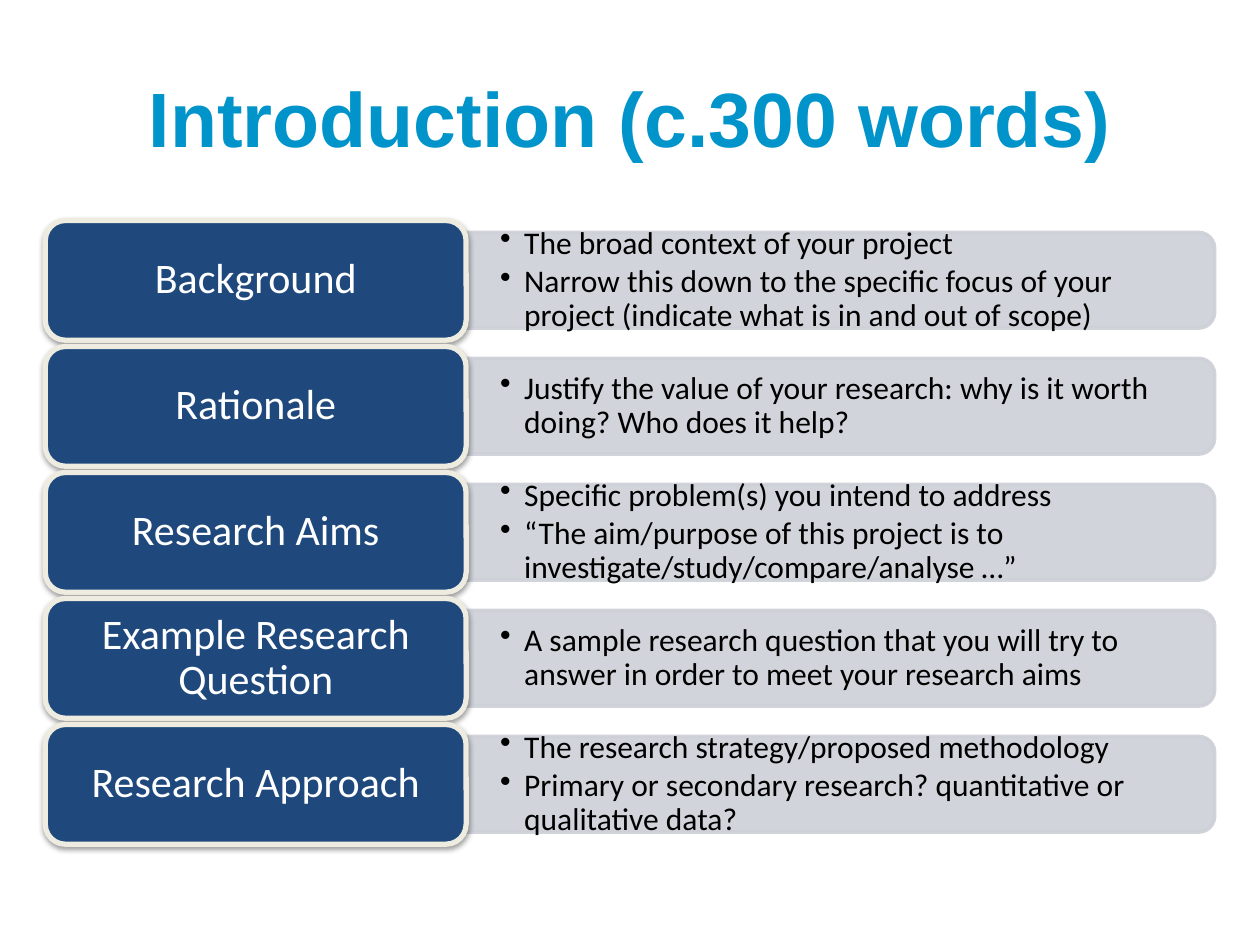
from dataclasses import dataclass

from lxml.etree import SubElement
from pptx import Presentation
from pptx.dml.color import RGBColor
from pptx.enum.shapes import MSO_SHAPE
from pptx.enum.text import MSO_ANCHOR, PP_ALIGN
from pptx.oxml.ns import qn
from pptx.util import Inches, Pt


@dataclass(frozen=True)
class Theme:
    title_color: str = "0094CB"
    label_fill: str = "1F497D"
    label_line: str = "EEECE1"
    label_text: str = "FFFFFF"
    bar: str = "CDD0D7"
    bullet_text: str = "000000"
    shadow: str = "000000"
    title_font: str = "Arial"
    body_font: str = "Calibri"
    title_size: int = 44
    label_size: int = 24
    bullet_size: int = 18


THEME = Theme()

# Row grid, in inches
FIRST_TOP, ROW_STEP = 1.75, 1.0
LABEL_LEFT, LABEL_WIDTH, LABEL_HEIGHT = 0.36, 3.34, 0.95
BAR_LEFT, BAR_LENGTH, BAR_HEIGHT = LABEL_LEFT + LABEL_WIDTH, 5.94, 0.76

SECTIONS = [
    ("Background", [
        "The broad context of your project",
        "Narrow this down to the specific focus of your project "
        "(indicate what is in and out of scope)"]),
    ("Rationale", [
        "Justify the value of your research: why is it worth doing? "
        "Who does it help?"]),
    ("Research Aims", [
        "Specific problem(s) you intend to address",
        "“The aim/purpose of this project is to "
        "investigate/study/compare/analyse …”"]),
    ("Example Research Question", [
        "A sample research question that you will try to answer "
        "in order to meet your research aims"]),
    ("Research Approach", [
        "The research strategy/proposed methodology",
        "Primary or secondary research? quantitative or qualitative data?"]),
]


def add_bullet(para):
    properties = para._p.get_or_add_pPr()
    properties.set("marL", str(Inches(0.19)))
    properties.set("indent", str(-Inches(0.19)))
    SubElement(properties, qn("a:buChar"), char="•")


def add_text(page, lines, left, top, width, height, *, font, size, color,
             bold=False, align=PP_ALIGN.CENTER, bullets=False,
             line_spacing=None, space_after=0, insets=(0.1, 0.05)):
    box = page.shapes.add_textbox(Inches(left), Inches(top),
                                  Inches(width), Inches(height))
    frame = box.text_frame
    frame.word_wrap = True
    frame.vertical_anchor = MSO_ANCHOR.MIDDLE
    frame.margin_left = frame.margin_right = Inches(insets[0])
    frame.margin_top = frame.margin_bottom = Inches(insets[1])
    for index, line in enumerate(lines):
        para = frame.add_paragraph() if index else frame.paragraphs[0]
        para.alignment = align
        if bullets:
            para.level = 1
            add_bullet(para)
        if line_spacing:
            para.line_spacing = line_spacing
        para.space_after = Pt(space_after)
        span = para.add_run()
        span.text = line
        span.font.name = font
        span.font.size = Pt(size)
        span.font.bold = bold
        span.font.color.rgb = RGBColor.from_string(color)


def add_panel(page, kind, left, top, width, height, *, fill, line, weight):
    shape = page.shapes.add_shape(kind, Inches(left), Inches(top),
                                  Inches(width), Inches(height))
    shape.fill.solid()
    shape.fill.fore_color.rgb = RGBColor.from_string(fill)
    shape.line.color.rgb = RGBColor.from_string(line)
    shape.line.width = Pt(weight)
    shape.shadow.inherit = False
    return shape


def set_opacity(shape, percent):
    for color in shape._element.spPr.iter(qn("a:srgbClr")):
        SubElement(color, qn("a:alpha"), val=str(percent * 1000))


def add_shadow(shape):
    effects = shape._element.spPr.find(qn("a:effectLst"))
    shadow = SubElement(effects, qn("a:outerShdw"), blurRad=str(Pt(3.1)),
                        dist=str(Pt(1.6)), dir=str(90 * 60000), rotWithShape="0")
    color = SubElement(shadow, qn("a:srgbClr"), val=THEME.shadow)
    SubElement(color, qn("a:alpha"), val="38000")


def add_bar(page, middle, bullets):
    # The bar stands upright and is turned so its round corners face right
    center = BAR_LEFT + BAR_LENGTH / 2
    bar = add_panel(page, MSO_SHAPE.ROUND_2_SAME_RECTANGLE,
                    center - BAR_HEIGHT / 2, middle - BAR_LENGTH / 2,
                    BAR_HEIGHT, BAR_LENGTH,
                    fill=THEME.bar, line=THEME.bar, weight=2)
    bar.rotation = 90
    set_opacity(bar, 90)
    add_text(page, bullets, BAR_LEFT, middle - 0.345, 5.91, 0.69,
             font=THEME.body_font, size=THEME.bullet_size,
             color=THEME.bullet_text, align=PP_ALIGN.LEFT, bullets=True,
             line_spacing=0.9, space_after=2.7, insets=(0.27, 0.14))


def add_label(page, top, label):
    panel = add_panel(page, MSO_SHAPE.ROUNDED_RECTANGLE, LABEL_LEFT, top,
                      LABEL_WIDTH, LABEL_HEIGHT, fill=THEME.label_fill,
                      line=THEME.label_line, weight=3)
    add_shadow(panel)
    inset = 0.045
    add_text(page, [label], LABEL_LEFT + inset, top + inset,
             LABEL_WIDTH - 2 * inset, LABEL_HEIGHT - 2 * inset,
             font=THEME.body_font, size=THEME.label_size,
             color=THEME.label_text, line_spacing=0.9, space_after=8.4)


def main():
    deck = Presentation()
    deck.slide_width, deck.slide_height = Inches(10), Inches(7.5)
    page = deck.slides.add_slide(deck.slide_layouts[6])

    # Title
    add_text(page, ["Introduction (c.300 words)"], 0.36, 0.3, 9.29, 1.25,
             font=THEME.title_font, size=THEME.title_size,
             color=THEME.title_color, bold=True)

    # One row per section: bar behind, label in front
    for row, (label, bullets) in enumerate(SECTIONS):
        top = FIRST_TOP + row * ROW_STEP
        add_bar(page, top + LABEL_HEIGHT / 2, bullets)
        add_label(page, top, label)

    deck.save("out.pptx")


if __name__ == "__main__":
    main()
